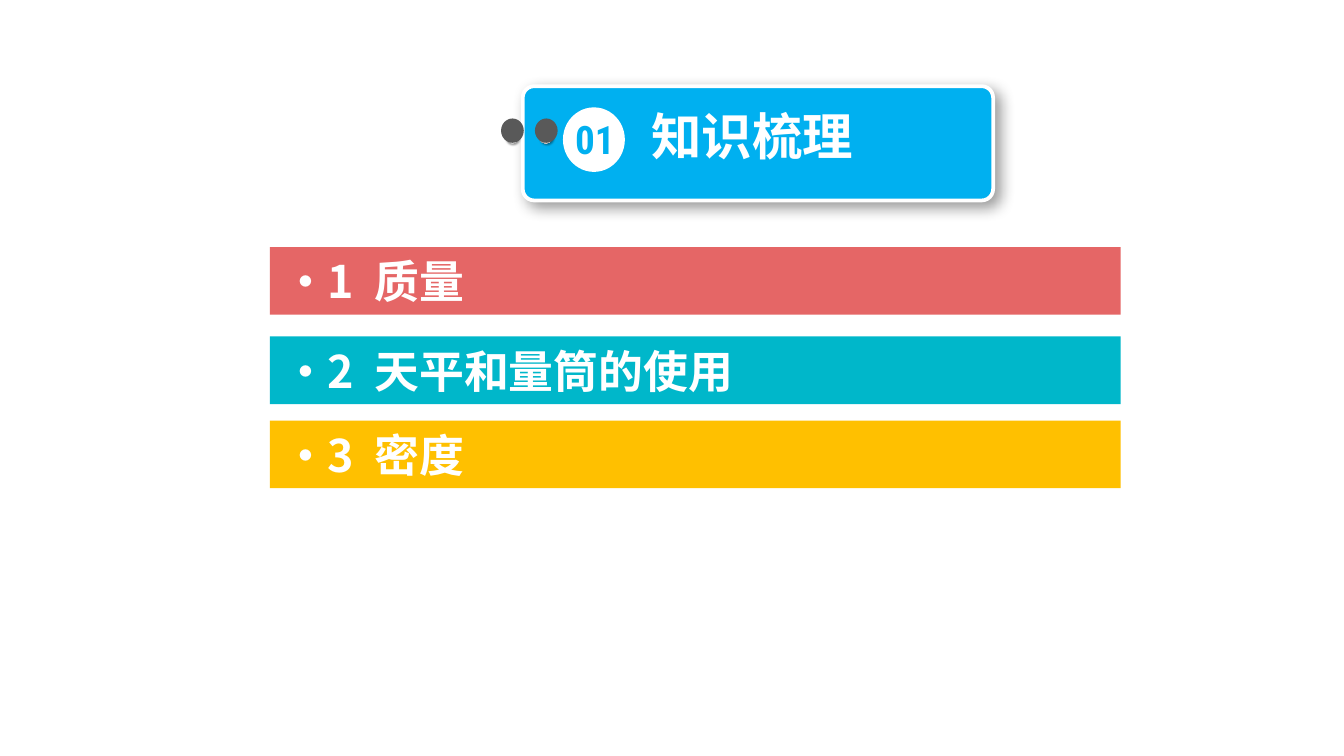
from dataclasses import dataclass

import lxml.etree
import pptx
import pptx.dml.color
import pptx.enum.shapes
import pptx.enum.text
import pptx.oxml
import pptx.oxml.ns
import pptx.util

Cm = pptx.util.Cm
Pt = pptx.util.Pt
Kind = pptx.enum.shapes.MSO_SHAPE
Align = pptx.enum.text.PP_ALIGN

CJK_FONT = "Noto Sans CJK SC"
DIGIT_FONT = "Roboto Condensed"
BLUE = "00B0F0"
WHITE = "FFFFFF"
DARK = "595959"
METAL_STOPS = [(0, "FFFFFF"), (17, "A6A6A6"), (35, "F2F2F2"),
               (55, "A6A6A6"), (75, "F2F2F2"), (100, "A6A6A6")]


@dataclass(frozen=True)
class Box:
    left: float
    top: float
    width: float
    height: float

    def lengths(self) -> tuple:
        return Cm(self.left), Cm(self.top), Cm(self.width), Cm(self.height)


@dataclass(frozen=True)
class Topic:
    top: float
    color: str
    number: str
    title: str


TOPICS = [
    Topic(4.67, "E56666", "·1", "质量"),
    Topic(6.36, "00B7CA", "·2", "天平和量筒的使用"),
    Topic(7.95, "FFC000", "·3", "密度"),
]


def rgb(color: str) -> pptx.dml.color.RGBColor:
    return pptx.dml.color.RGBColor.from_string(color)


def add_solid(slide, kind, box: Box, color: str):
    shape = slide.shapes.add_shape(kind, *box.lengths())
    shape.shadow.inherit = False
    shape.fill.solid()
    shape.fill.fore_color.rgb = rgb(color)
    shape.line.fill.background()
    return shape


def cast_shadow(shape, blur: float, distance: float) -> None:
    effects = shape._element.spPr.find(pptx.oxml.ns.qn("a:effectLst"))
    effects.append(pptx.oxml.parse_xml(
        f'<a:outerShdw {pptx.oxml.ns.nsdecls("a")} blurRad="{Pt(blur)}" '
        f'dist="{Pt(distance)}" dir="2700000" algn="tl" rotWithShape="0">'
        '<a:srgbClr val="000000"><a:alpha val="40000"/></a:srgbClr></a:outerShdw>'))


def fill_metal(shape) -> None:
    shape.fill.gradient()
    shape.fill.gradient_angle = 315
    gradient = shape._element.spPr.find(pptx.oxml.ns.qn("a:gradFill"))
    stops = gradient.find(pptx.oxml.ns.qn("a:gsLst"))
    for stop in list(stops):
        stops.remove(stop)
    for position, color in METAL_STOPS:
        stop = lxml.etree.SubElement(stops, pptx.oxml.ns.qn("a:gs"), pos=str(position * 1000))
        lxml.etree.SubElement(stop, pptx.oxml.ns.qn("a:srgbClr"), val=color)


def add_rivet(slide, left: float) -> None:
    rim = add_solid(slide, Kind.OVAL, Box(left + 0.08, 2.46, 0.25, 0.25), WHITE)
    rim.rotation = 270
    fill_metal(rim)
    cast_shadow(rim, 1, 1)
    add_solid(slide, Kind.OVAL, Box(left, 2.24, 0.43, 0.46), DARK)


def add_run(paragraph, text: str, size: float, font: str, color: str):
    run = paragraph.add_run()
    run.text = text
    run.font.size = Pt(size)
    run.font.bold = True
    run.font.name = font
    run.font.color.rgb = rgb(color)
    lxml.etree.SubElement(run.font._element, pptx.oxml.ns.qn("a:ea"), typeface=font)
    return run


def add_label(slide, box: Box, text: str, size: float, font: str, color: str) -> None:
    frame = slide.shapes.add_textbox(*box.lengths()).text_frame
    frame.word_wrap = True
    frame.vertical_anchor = pptx.enum.text.MSO_ANCHOR.MIDDLE
    frame.margin_left = frame.margin_right = 0
    frame.margin_top = frame.margin_bottom = 0
    paragraph = frame.paragraphs[0]
    paragraph.alignment = Align.CENTER
    add_run(paragraph, text, size, font, color)


def add_topic(slide, topic: Topic) -> None:
    bar = add_solid(slide, Kind.RECTANGLE, Box(5.1, topic.top, 16.08, 1.28), topic.color)
    frame = bar.text_frame
    frame.margin_top = frame.margin_bottom = 0
    paragraph = frame.paragraphs[0]
    paragraph.alignment = Align.LEFT
    add_run(paragraph, topic.number, 24, CJK_FONT, WHITE)
    gap = add_run(paragraph, " ", 24, CJK_FONT, WHITE)
    gap.font._element.set("spc", "540")
    add_run(paragraph, topic.title, 24, CJK_FONT, WHITE)


def add_heading(slide) -> None:
    card = add_solid(slide, Kind.ROUNDED_RECTANGLE, Box(9.88, 1.63, 8.89, 2.16), BLUE)
    card.adjustments[0] = 0.1
    card.line.color.rgb = rgb(WHITE)
    card.line.width = Pt(2)
    cast_shadow(card, 8, 4)
    for left in (10.11, 9.47):
        add_rivet(slide, left)
    add_solid(slide, Kind.OVAL, Box(10.64, 2.03, 1.17, 1.22), WHITE)
    add_label(slide, Box(10.57, 2.06, 1.35, 1.14), "01", 21, DIGIT_FONT, BLUE)
    add_label(slide, Box(11.4, 1.85, 5.64, 1.42), "知识梳理", 27, CJK_FONT, WHITE)


def main() -> None:
    presentation = pptx.Presentation()
    presentation.slide_width = Cm(25.4)
    presentation.slide_height = Cm(14.29)
    slide = presentation.slides.add_slide(presentation.slide_layouts[6])
    add_heading(slide)
    for topic in TOPICS:
        add_topic(slide, topic)
    presentation.save("out.pptx")


if __name__ == "__main__":
    main()
